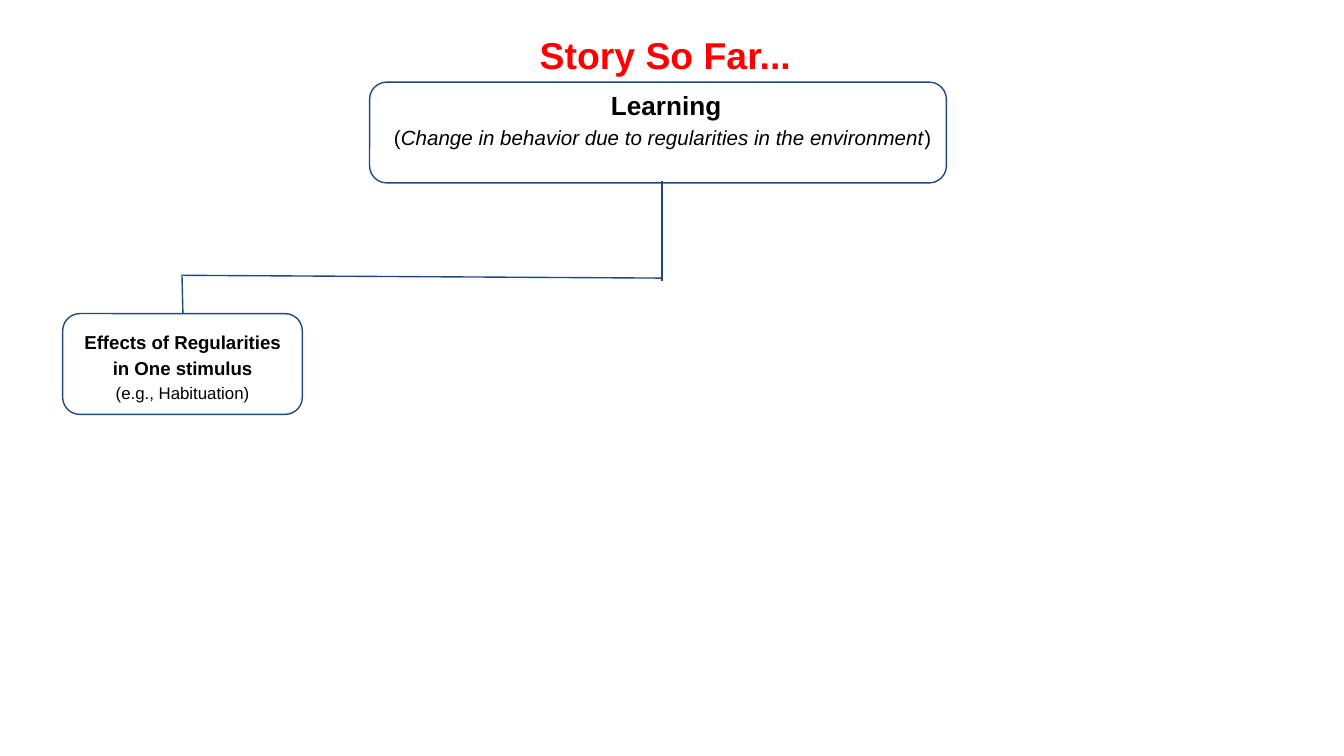
from lxml import etree
from pptx import Presentation
from pptx.dml.color import RGBColor
from pptx.enum.shapes import MSO_CONNECTOR as CONN, MSO_SHAPE as SHAPE
from pptx.enum.text import MSO_ANCHOR as ANCHOR, PP_ALIGN as ALIGN
from pptx.oxml.ns import qn
from pptx.util import Pt

COLORS = {"title": "FF0000", "text": "000000", "line": "1F497D"}


def rgb(name):
    """Return the named palette colour."""
    return RGBColor.from_string(COLORS[name])


def add_run(p, text, size=11, bold=False, italic=False, color="text"):
    """Add a formatted run to a paragraph."""
    r = p.add_run()
    r.text = text
    r.font.name = "Arial"
    r.font.size = Pt(size)
    r.font.bold = bold
    r.font.italic = italic
    r.font.color.rgb = rgb(color)


def add_text(s, x, y, w, h, paragraphs):
    """Add a centred text box from lists of (text, format) runs."""
    tf = s.shapes.add_textbox(Pt(x), Pt(y), Pt(w), Pt(h)).text_frame
    tf.word_wrap = True
    tf.vertical_anchor = ANCHOR.TOP
    tf.margin_left = tf.margin_right = tf.margin_top = tf.margin_bottom = Pt(7.2)
    for i, runs in enumerate(paragraphs):
        p = tf.add_paragraph() if i else tf.paragraphs[0]
        p.alignment = ALIGN.CENTER
        p.line_spacing = 1.15
        for text, fmt in runs:
            add_run(p, text, **fmt)


def add_frame(s, x, y, w, h):
    """Add an unfilled rounded outline."""
    sp = s.shapes.add_shape(SHAPE.ROUNDED_RECTANGLE, Pt(x), Pt(y), Pt(w), Pt(h))
    sp.adjustments[0] = 0.17
    sp.shadow.inherit = False
    sp.fill.background()
    sp.line.color.rgb = rgb("line")
    sp.line.width = Pt(0.75)


def add_line(s, x1, y1, x2, y2):
    """Add a straight branch line."""
    c = s.shapes.add_connector(CONN.STRAIGHT, Pt(x1), Pt(y1), Pt(x2), Pt(y2))
    c.line.color.rgb = rgb("line")
    c.line.width = Pt(0.75)
    etree.SubElement(c._element.spPr, qn("a:effectLst"))


def title(s, x, y, w, h):
    """Place the slide title."""
    add_text(s, x, y, w, h, [[("Story So Far...", dict(size=20, bold=True, color="title"))]])


def learning(s, x, y, w, h):
    """Place the root box with its definition."""
    add_frame(s, x, y, w, h)
    add_text(s, x - 31, y - 5.75, w + 67, h + 4.3, [
        [(" Learning", dict(size=14, bold=True))],
        [("(", {}),
         ("Change in behavior due to regularities in the environment", dict(italic=True)),
         (")", {})],
    ])


def one_stimulus(s, x, y, w, h):
    """Place the box for effects of one stimulus."""
    add_frame(s, x, y, w, h)
    add_text(s, x, y + 0.5, w, h, [
        [("Effects of Regularities in One stimulus", dict(size=10, bold=True))],
        [("(e.g., Habituation)", dict(size=9))],
    ])


def branch(s, x, y, w, h):
    """Join the root box to the box at the lower left."""
    bar = y + 50.75
    add_line(s, x + w, y, x + w, y + 54)
    add_line(s, x + 0.5, bar, x + w, bar + 1.5)
    add_line(s, x, bar - 0.5, x + 0.5, y + h)


def main():
    """Build and save the slide."""
    prs = Presentation()
    prs.slide_width, prs.slide_height = Pt(720), Pt(405)
    s = prs.slides.add_slide(prs.slide_layouts[6])
    branch(s, 97.5, 96.75, 257.25, 71.25)
    one_stimulus(s, 33.6, 168, 128.4, 54)
    learning(s, 198, 44, 309, 54)
    title(s, 240, 6.5, 233, 33)
    prs.save("out.pptx")


if __name__ == "__main__":
    main()
